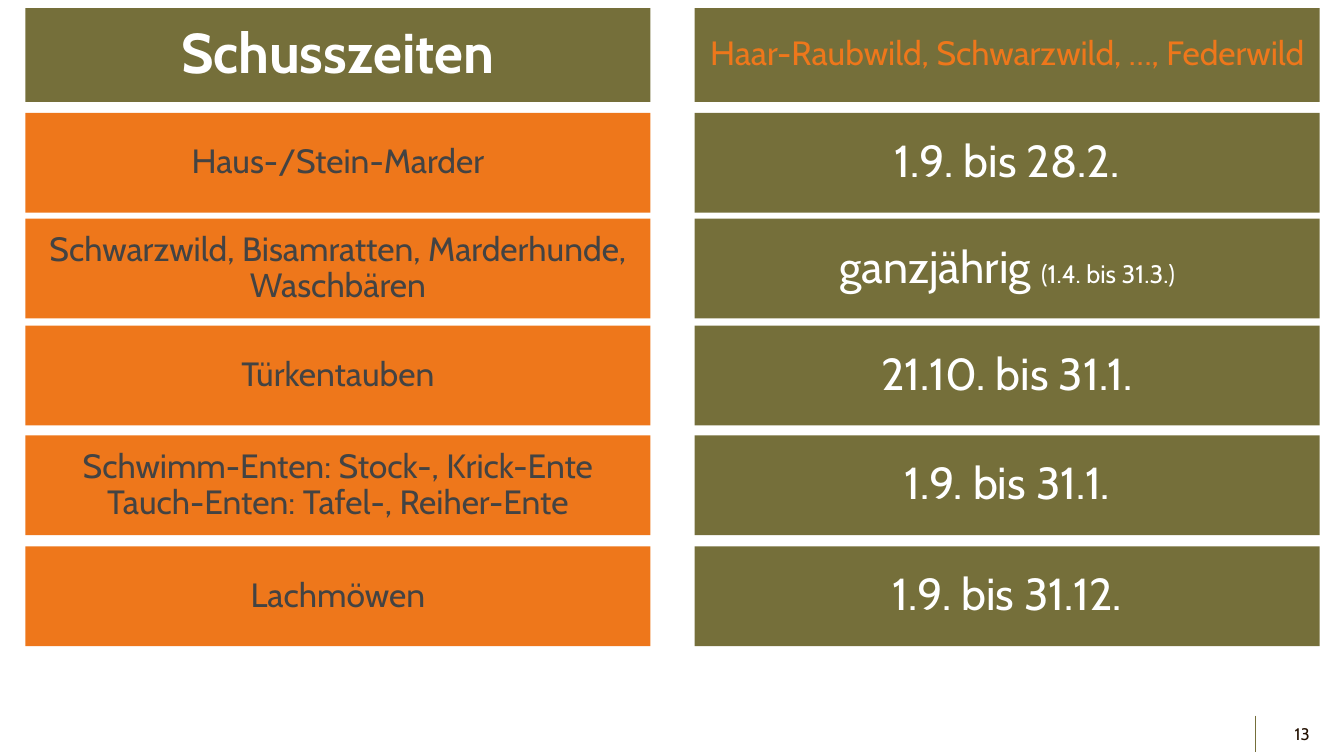
from dataclasses import dataclass

import pptx
import pptx.dml.color
import pptx.enum.shapes
import pptx.enum.text
import pptx.oxml
import pptx.util

COLOURS = {"olive": "756F3A", "orange": "EE771B", "white": "FFFFFF",
           "grey": "434343", "black": "231001"}
FONT = "Cabin"
SLIDE_WIDTH = pptx.util.Inches(13.33)
SLIDE_HEIGHT = pptx.util.Inches(7.5)

# Grid, in percent of the slide's width or height
GAME_LEFT, SEASON_LEFT, COLUMN_WIDTH = 1.88, 51.69, 46.51
HEADER_TOP, HEADER_HEIGHT, ROW_HEIGHT = 1.07, 12.4, 13.2


@dataclass(frozen=True)
class Area:
    """A rectangle in percent of the slide's size."""
    left: float
    top: float
    width: float
    height: float


@dataclass(frozen=True)
class Piece:
    text: str
    size: int
    colour: str
    bold: bool = False


@dataclass(frozen=True)
class Season:
    top: float
    game: str
    period: str
    note: str = ""


SEASONS = [
    Season(14.93, "Haus-/Stein-Marder", "1.9. bis 28.2."),
    Season(28.93, "Schwarzwild, Bisamratten, Marderhunde, Waschbären",
           "ganzjährig ", "(1.4. bis 31.3.)"),
    Season(43.07, "Türkentauben", "21.10. bis 31.1."),
    Season(57.6, "Schwimm-Enten: Stock-, Krick-Ente\nTauch-Enten: Tafel-, Reiher-Ente",
           "1.9. bis 31.1."),
    Season(72.27, "Lachmöwen", "1.9. bis 31.12."),
]


def rgb(colour: str) -> pptx.dml.color.RGBColor:
    return pptx.dml.color.RGBColor.from_string(COLOURS[colour])


def across(percent: float) -> int:
    return round(SLIDE_WIDTH * percent / 100)


def down(percent: float) -> int:
    return round(SLIDE_HEIGHT * percent / 100)


def bounds(area: Area) -> tuple[int, int, int, int]:
    return across(area.left), down(area.top), across(area.width), down(area.height)


def write(shape, pieces: list[Piece], align=pptx.enum.text.PP_ALIGN.CENTER,
          spacing: float = 0.9) -> None:
    frame = shape.text_frame
    frame.word_wrap = True
    frame.auto_size = pptx.enum.text.MSO_AUTO_SIZE.NONE
    frame.vertical_anchor = pptx.enum.text.MSO_ANCHOR.MIDDLE
    paragraph = frame.paragraphs[0]
    paragraph.alignment = align
    paragraph.line_spacing = spacing
    for piece in pieces:
        for number, line in enumerate(piece.text.split("\n")):
            if number:
                paragraph.add_line_break()
            run = paragraph.add_run()
            run.text = line
            run.font.name = FONT
            run.font.size = pptx.util.Pt(piece.size)
            run.font.bold = piece.bold
            run.font.color.rgb = rgb(piece.colour)


def paint(shape, fill: str) -> None:
    shape.fill.solid()
    shape.fill.fore_color.rgb = rgb(fill)
    shape.line.fill.background()


def add_panel(slide, area: Area, fill: str, pieces: list[Piece]) -> None:
    panel = slide.shapes.add_shape(
        pptx.enum.shapes.MSO_SHAPE.RECTANGLE, *bounds(area))
    panel.shadow.inherit = False
    paint(panel, fill)
    write(panel, pieces)


def add_page_mark(slide) -> None:
    rule = slide.shapes.add_connector(
        pptx.enum.shapes.MSO_CONNECTOR.STRAIGHT,
        across(93.4), down(94.67), across(93.4), down(99.47))
    rule.line.color.rgb = rgb("olive")
    rule.line.width = pptx.util.Pt(0.75)
    properties = rule.element.spPr
    properties.append(pptx.oxml.parse_xml(
        '<a:effectLst xmlns:a="http://schemas.openxmlformats.org/drawingml/2006/main"/>'))
    page_number = slide.shapes.add_textbox(*bounds(Area(94.37, 94.4, 3.83, 5.33)))
    write(page_number, [Piece("13", 12, "black")],
          pptx.enum.text.PP_ALIGN.RIGHT, 1.0)


def main() -> None:
    deck = pptx.Presentation()
    deck.slide_width, deck.slide_height = SLIDE_WIDTH, SLIDE_HEIGHT
    slide = deck.slides.add_slide(deck.slide_layouts.get_by_name("Title Only"))
    add_page_mark(slide)

    # Header row
    title = slide.shapes.title
    title.left, title.top, title.width, title.height = bounds(
        Area(GAME_LEFT, HEADER_TOP, COLUMN_WIDTH, HEADER_HEIGHT))
    paint(title, "olive")
    write(title, [Piece("Schusszeiten", 40, "white", True)])
    add_panel(slide, Area(SEASON_LEFT, HEADER_TOP, COLUMN_WIDTH, HEADER_HEIGHT),
              "olive", [Piece("Haar-Raubwild, Schwarzwild, …, Federwild", 24, "orange")])

    # Game on the left, its season on the right
    for season in SEASONS:
        add_panel(slide, Area(GAME_LEFT, season.top, COLUMN_WIDTH, ROW_HEIGHT),
                  "orange", [Piece(season.game, 24, "grey")])
        period = [Piece(season.period, 32, "white")]
        if season.note:
            period.append(Piece(season.note, 18, "white"))
        add_panel(slide, Area(SEASON_LEFT, season.top, COLUMN_WIDTH, ROW_HEIGHT),
                  "olive", period)

    deck.save("out.pptx")


if __name__ == "__main__":
    main()
